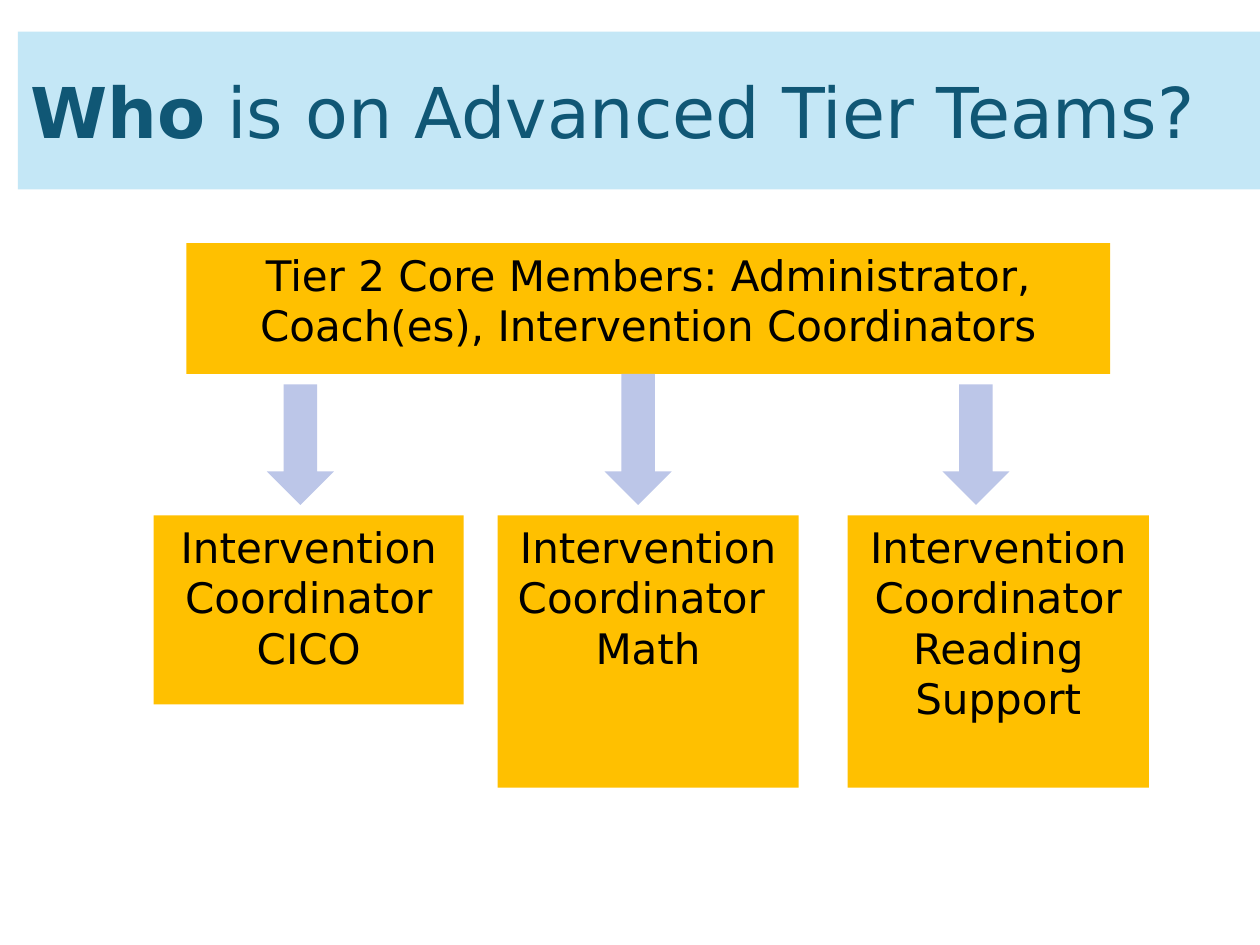
import pptx
import pptx.dml.color
import pptx.enum.shapes
import pptx.enum.text
import pptx.oxml
import pptx.util
import lxml.etree
from dataclasses import dataclass

Cm = pptx.util.Cm
Kind = pptx.enum.shapes.MSO_SHAPE
Align = pptx.enum.text.PP_ALIGN


@dataclass
class Theme:
    font: str = "DejaVu Sans"
    head: float = 40
    body: float = 24
    band: str = "A9DCF2"
    title: str = "105775"
    box: str = "FFC000"
    arrow: str = "BCC6E8"
    ink: str = "000000"


theme = Theme()


def style(para, size, color, align):
    para.alignment = align
    para.font.name = theme.font
    para.font.size = pptx.util.Pt(size)
    para.font.color.rgb = pptx.dml.color.RGBColor.from_string(color)


def draw(kind, color, left, top, width, height, lines=()):
    shape = slide.shapes.add_shape(kind, Cm(left), Cm(top), Cm(width), Cm(height))
    shape.shadow.inherit = False
    shape.fill.solid()
    shape.fill.fore_color.rgb = pptx.dml.color.RGBColor.from_string(color)
    shape.line.fill.background()
    if lines:
        frame = shape.text_frame
        frame.word_wrap = True
        frame.vertical_anchor = pptx.enum.text.MSO_ANCHOR.TOP
        frame.text = "\n".join(lines)
        for para in frame.paragraphs:
            style(para, theme.body, theme.ink, Align.CENTER)


deck = pptx.Presentation()
deck.slide_width, deck.slide_height = Cm(25.4), Cm(19.05)
slide = deck.slides.add_slide(deck.slide_layouts[5])

# Title on a translucent band
title = slide.shapes.title
title.left, title.top, title.width, title.height = Cm(0.36), Cm(0.64), Cm(25.04), Cm(3.18)
title.fill.solid()
title.fill.fore_color.rgb = pptx.dml.color.RGBColor.from_string(theme.band)
tint = title.fill._xPr.find(".//" + pptx.oxml.ns.qn("a:srgbClr"))
lxml.etree.SubElement(tint, pptx.oxml.ns.qn("a:alpha"), val="68000")
frame = title.text_frame
frame.auto_size = pptx.enum.text.MSO_AUTO_SIZE.NONE
frame.vertical_anchor = pptx.enum.text.MSO_ANCHOR.MIDDLE
para = frame.paragraphs[0]
for text, bold in (("Who", True), (" is on Advanced Tier Teams?", False)):
    run = para.add_run()
    run.text = text
    run.font.bold = bold
style(para, theme.head, theme.title, Align.LEFT)

# Core team
draw(Kind.RECTANGLE, theme.box, 3.76, 4.9, 18.62, 2.64,
     ["Tier 2 Core Members: Administrator, Coach(es), Intervention Coordinators"])

# Coordinators
cards = [
    (3.1, 6.25, 3.81, ["Intervention Coordinator CICO"]),
    (10.03, 6.07, 5.49, ["Intervention Coordinator ", "Math"]),
    (17.09, 6.07, 5.49, ["Intervention Coordinator Reading Support"]),
]
for left, width, height, lines in cards:
    draw(Kind.RECTANGLE, theme.box, left, 10.39, width, height, lines)

# Arrows, all ending on one level
tip = 10.18
for col, top in enumerate((7.75, 7.54, 7.75)):
    draw(Kind.DOWN_ARROW, theme.arrow, 5.38 + 6.81 * col, top, 1.35, tip - top)

deck.save("out.pptx")
